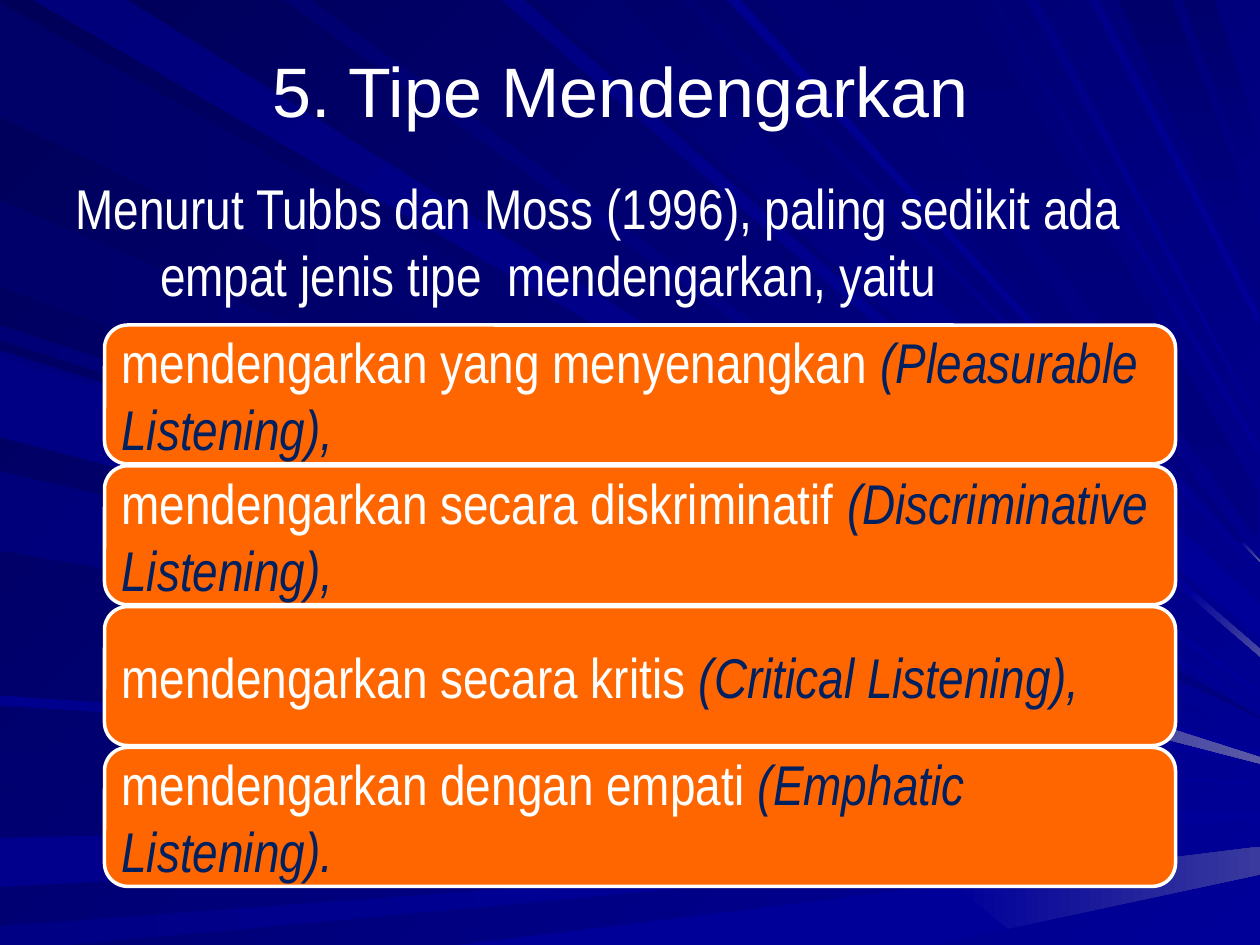
from dataclasses import dataclass
from pptx import Presentation
from pptx import util as u
from pptx.dml.color import RGBColor
from pptx.enum import shapes, text
from pptx.oxml.xmlchemy import OxmlElement


@dataclass(frozen=True)
class Theme:
    white: str = "FFFFFF"
    navy: str = "002060"
    orange: str = "FF6600"
    dark: str = "000058"
    blue: str = "000099"
    mid: str = "000080"
    head: str = "Arial"
    face: str = "Arial Narrow"
    big: int = 40
    size: int = 32
    edge: int = 2


T = Theme()
WIDE, HIGH = u.Inches(10), u.Inches(7.5)
UNIT = WIDE // 1000
LEFT, TOP, WIDTH, TALL, STEP = 0.083, 0.344, 0.85, 0.147, 0.149

RAYS = [
    ("556,317 0,2 0,93 529,345 1000,570 1000,569", "000069", T.mid, 0),
    ("577,298 101,0 26,0 563,310 1000,563 1000,562", "00007B", T.blue, 45),
    ("0,623 701,629 701,621 0,596", "000071", T.mid, 0),
    ("1000,632 1000,631 701,621 701,629", T.mid, T.blue, 0),
    ("0,704 831,660 831,647 0,665", "00008C", T.blue, 0),
    ("1000,651 1000,643 831,647 831,660", T.blue, T.blue, 0),
    ("1000,662 628,689 628,697", T.blue, T.blue, 0),
    ("0,750 54,750 628,697 628,689 0,735", "000085", T.blue, 0),
    ("742,750 801,737 756,702 364,750", T.blue, T.blue, 0),
    ("1000,694 1000,672 756,702 800,737", T.blue, "39399E", 0),
    ("1000,589 873,547 873,548", T.blue, T.blue, 0),
    ("0,270 873,548 873,547 0,258", "000076", T.blue, 45),
    ("1000,585 1000,584 873,529 873,539", T.mid, T.blue, 0),
    ("0,228 873,539 873,529 0,159", "00006B", T.mid, 0),
    ("398,0 944,473 947,469 416,0", "000083", T.blue, 45),
    ("1000,521 1000,515 947,469 944,473", T.blue, "4A4AA1", 45),
    ("1000,507 1000,479 968,449 951,465", T.blue, T.blue, 0),
    ("426,0 951,465 968,449 492,0", "00006D", T.blue, 45),
    ("540,0 977,440 552,0", "000073", T.blue, 45),
    ("606,0 985,431 987,430 661,0", "000073", T.mid, 90),
    ("1000,446 1000,445 987,430 985,431", T.blue, "5A5AA6", 45),
    ("1000,237 1000,183 986,148 973,181", T.mid, T.mid, 0),
    ("887,0 973,181 986,148 930,0", "00006B", T.mid, 90),
    ("964,0 939,0 989,138 999,113", "00006D", T.mid, 90),
    ("989,138 1000,167 1000,114 999,113", T.mid, T.mid, 0),
    ("0,342 999,602 999,596 0,278", "00007E", T.blue, 45),
    ("0,437 999,606 999,605 0,374", "00007B", T.blue, 45),
    ("0,560 999,623 999,621 0,552", "00008E", T.blue, 0),
    ("225,0 999,552 999,547 247,0", "000070", T.blue, 45),
    ("577,0 999,454 999,453 588,0", "00008E", T.blue, 45),
    ("770,0 686,0 999,428 999,390 998,390", "000073", T.mid, 90),
    ("785,0 999,360 999,354 792,0", "000078", T.blue, 45),
    ("815,0 999,336 999,335 824,0", "000085", T.blue, 45),
    ("999,249 872,0 865,0 999,258", "00008A", T.blue, 45),
    ("0,283 0,347 633,511 635,498 637,485", "000085", T.blue, 0),
    ("1000,601 637,485 635,498 633,511 1000,606", T.blue, "5A5AA6", 0),
]

KINDS = [
    ("mendengarkan yang menyenangkan ", "(Pleasurable Listening),"),
    ("mendengarkan secara diskriminatif ", "(Discriminative Listening),"),
    ("mendengarkan secara kritis ", "(Critical Listening),"),
    ("mendengarkan dengan empati ", "(Emphatic Listening)."),
]


def rgb(code):
    return RGBColor.from_string(code)


def blend(fill, start, end, angle):
    fill.gradient()
    fill.gradient_angle = (360 - angle) % 360
    for stop, code in zip(fill.gradient_stops, (start, end)):
        stop.color.rgb = rgb(code)


def style(run, face, size, code, slant=False):
    font = run.font
    font.name, font.size, font.italic = face, u.Pt(size), slant
    font.color.rgb = rgb(code)


def place(shape, left, top, width, tall):
    shape.left, shape.top = int(WIDE * left), int(HIGH * top)
    shape.width, shape.height = int(WIDE * width), int(HIGH * tall)


def draw_rays(slide):
    group = slide.shapes.add_group_shape()
    for line, start, end, angle in RAYS:
        dots = [tuple(map(int, dot.split(","))) for dot in line.split()]
        pen = group.shapes.build_freeform(*dots[0], scale=UNIT)
        pen.add_line_segments(dots[1:], close=True)
        ray = pen.convert_to_shape()
        ray.shadow.inherit = False
        ray.line.fill.background()
        if start == end:
            ray.fill.solid()
            ray.fill.fore_color.rgb = rgb(start)
        else:
            blend(ray.fill, start, end, angle)
    slide.shapes.title.element.addprevious(group.element)


def write_title(slide):
    title = slide.shapes.title
    place(title, 0.05, 0.04, 0.9, 0.11)
    frame = title.text_frame
    frame.text = "5. Tipe Mendengarkan "
    frame.auto_size = text.MSO_AUTO_SIZE.NONE
    frame.vertical_anchor = text.MSO_ANCHOR.MIDDLE
    para = frame.paragraphs[0]
    para.alignment = text.PP_ALIGN.CENTER
    style(para.runs[0], T.head, T.big, T.white)


def write_body(slide):
    body = slide.placeholders[1]
    place(body, 0.05, 0.177, 0.9, 0.744)
    frame = body.text_frame
    frame.text = ("Menurut Tubbs dan Moss (1996), paling sedikit ada "
                  "empat jenis tipe  mendengarkan, yaitu")
    frame.auto_size = text.MSO_AUTO_SIZE.NONE
    para = frame.paragraphs[0]
    props = para._p.get_or_add_pPr()
    props.set("marL", str(u.Inches(0.67)))
    props.set("indent", str(u.Inches(-0.67)))
    props.append(OxmlElement("a:buNone"))
    para.space_before = u.Pt(0)
    style(para.runs[0], T.face, T.size, T.white)


def add_card(slide, row, name, term):
    card = slide.shapes.add_shape(shapes.MSO_SHAPE.ROUNDED_RECTANGLE, 0, 0, 0, 0)
    place(card, LEFT, TOP + row * STEP, WIDTH, TALL)
    card.shadow.inherit = False
    card.fill.solid()
    card.fill.fore_color.rgb = rgb(T.orange)
    card.line.color.rgb = rgb(T.white)
    card.line.width = u.Pt(T.edge)
    frame = card.text_frame
    frame.word_wrap = True
    frame.vertical_anchor = text.MSO_ANCHOR.MIDDLE
    frame.margin_left = frame.margin_right = u.Inches(0.08)
    frame.margin_top = frame.margin_bottom = 0
    para = frame.paragraphs[0]
    para.alignment = text.PP_ALIGN.LEFT
    for part, code, slant in ((name, T.white, False), (term, T.navy, True)):
        run = para.add_run()
        run.text = part
        style(run, T.face, T.size, code, slant)


def main():
    deck = Presentation()
    deck.slide_width, deck.slide_height = WIDE, HIGH
    slide = deck.slides.add_slide(deck.slide_layouts[1])
    blend(slide.background.fill, T.dark, T.blue, 45)
    draw_rays(slide)
    write_title(slide)
    write_body(slide)
    for row, (name, term) in enumerate(KINDS):
        add_card(slide, row, name, term)
    deck.save("out.pptx")


if __name__ == "__main__":
    main()
